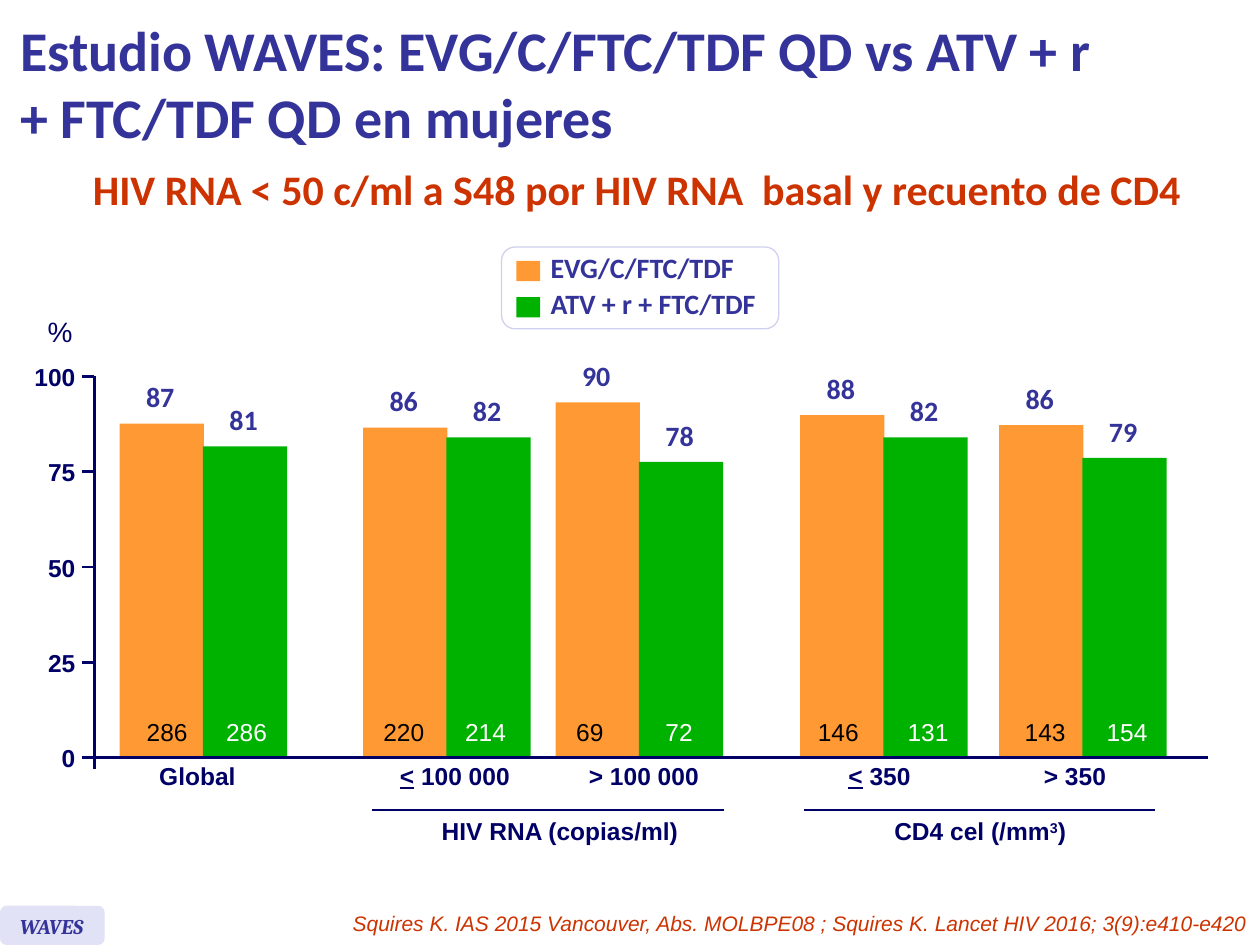
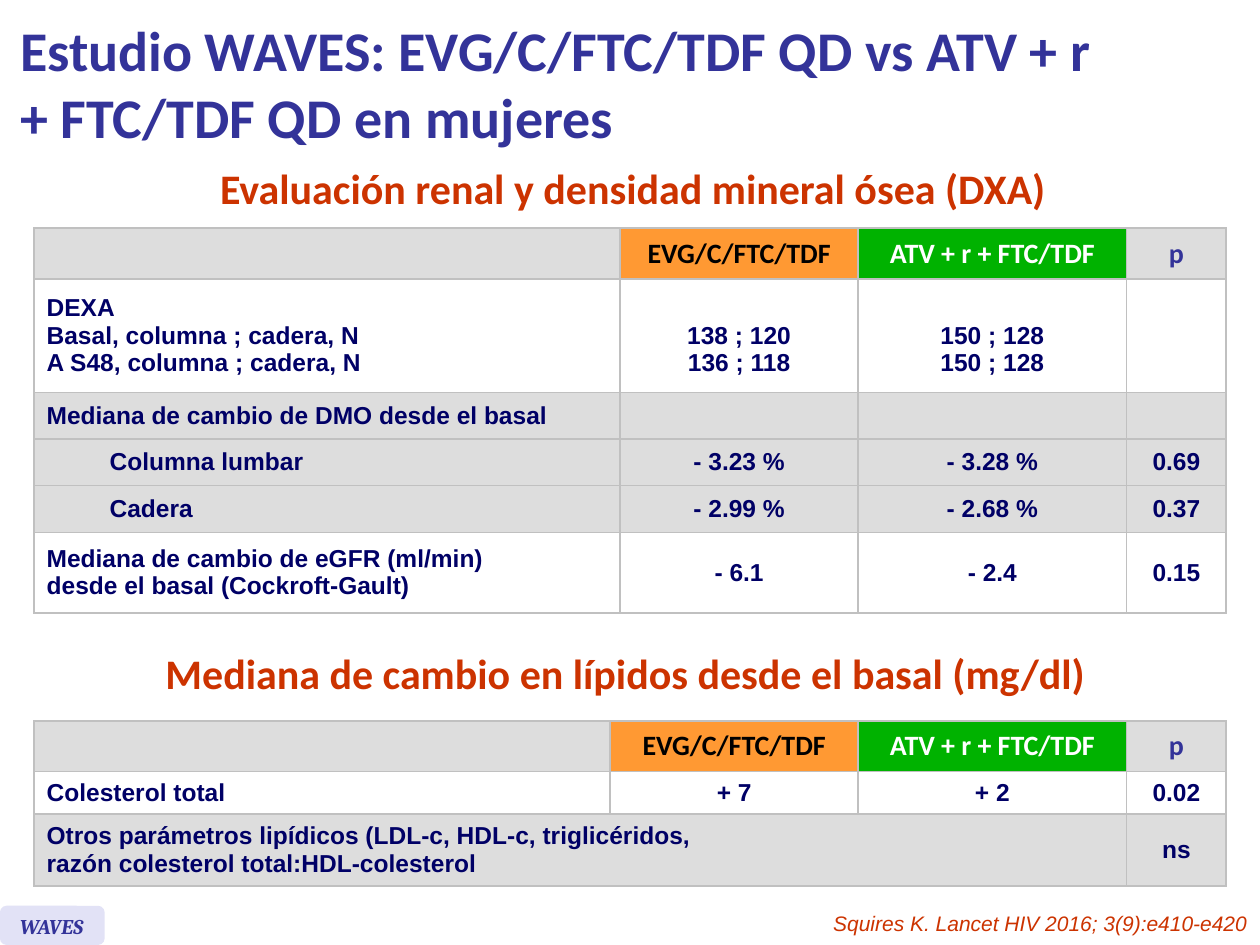
from dataclasses import dataclass, replace
from itertools import product

from lxml.etree import SubElement
from pptx import Presentation
from pptx.dml.color import RGBColor
from pptx.enum.shapes import MSO_CONNECTOR, MSO_SHAPE
from pptx.enum.text import MSO_ANCHOR, MSO_AUTO_SIZE, PP_ALIGN
from pptx.oxml.ns import qn
from pptx.util import Cm, Pt

COLORS = {
    "indigo": "333399", "navy": "000066", "red": "CC3300", "orange": "FF9933",
    "green": "00B200", "lavender": "E2E2F6", "legend_edge": "D0D0F0",
    "grey": "DDDDDD", "border": "C0C0C0", "white": "FFFFFF", "black": "000000",
}
TITLE = "Estudio WAVES: EVG/C/FTC/TDF QD vs ATV + r\n+ FTC/TDF QD en mujeres"
ARMS = ("EVG/C/FTC/TDF", "ATV + r + FTC/TDF")
ARM_COLORS = ("orange", "green")
ARM_TEXT_COLORS = ("black", "white")

LEFT, CENTER, RIGHT = PP_ALIGN.LEFT, PP_ALIGN.CENTER, PP_ALIGN.RIGHT


@dataclass(frozen=True)
class Style:
    size: float
    font: str
    color: str
    bold: bool = False
    italic: bool = False


@dataclass(frozen=True)
class Span:
    text: str
    underline: bool = False
    superscript: bool = False


@dataclass(frozen=True)
class Bar:
    percent: int
    height: float
    patients: int
    patients_center: float


@dataclass(frozen=True)
class BarPair:
    left: float
    bars: tuple[Bar, Bar]
    label: tuple[Span, ...]
    label_center: float
    label_width: float


@dataclass(frozen=True)
class Bracket:
    start: float
    end: float
    label: tuple[Span, ...]
    label_center: float
    label_width: float


@dataclass(frozen=True)
class Row:
    height: float
    fill: str
    texts: tuple[str, ...]
    label_indent: float = 0
    value_drop: float = 0
    label_columns: int = 1


TITLE_STYLE = Style(32, "Calibri", "indigo", bold=True)
HEADING = Style(24, "Calibri", "red", bold=True)
LABEL = Style(16, "Calibri", "indigo", bold=True)
BODY = Style(14, "Arial", "navy", bold=True)
UNIT = Style(16, "Arial", "navy")
CITATION = Style(12, "Arial", "red", italic=True)
TAG = Style(12, "Cambria", "indigo", bold=True, italic=True)

AXIS_X, AXIS_TOP, AXIS_BOTTOM = 1.9, 7.59, 15.27
BAR_BOTTOM, BAR_WIDTH, BAR_STEP = 15.24, 1.7, 1.68
LABEL_LINE = 0.86

BAR_PAIRS = (
    BarPair(2.41, (Bar(87, 6.7, 286, 3.37), Bar(81, 6.24, 286, 4.97)),
            (Span("Global"),), 3.98, 2.06),
    BarPair(7.32, (Bar(86, 6.62, 220, 8.14), Bar(82, 6.42, 214, 9.79)),
            (Span("<", underline=True), Span(" 100 000")), 9.17, 2.74),
    BarPair(11.2, (Bar(90, 7.13, 69, 11.89), Bar(78, 5.93, 72, 13.69)),
            (Span("> 100 000"),), 12.98, 2.74),
    BarPair(16.13, (Bar(88, 6.87, 146, 16.9), Bar(82, 6.42, 131, 18.71)),
            (Span("<", underline=True), Span(" 350")), 17.73, 1.78),
    BarPair(20.14, (Bar(86, 6.67, 143, 21.07), Bar(79, 6.01, 154, 22.72)),
            (Span("> 350"),), 21.67, 1.78),
)
BRACKETS = (
    Bracket(7.49, 14.6, (Span("HIV RNA (copias/ml)"),), 11.29, 5.31),
    Bracket(16.21, 23.29,
            (Span("CD4 cel (/mm"), Span("3", superscript=True), Span(")")), 19.76, 4.01),
)

BONE_ROWS = (
    Row(2.29, "white", ("DEXA\vBasal, columna ; cadera, N\vA S48, columna ; cadera, N",
                        "138 ; 120\v136 ; 118", "150 ; 128\v150 ; 128", ""), value_drop=0.56),
    Row(0.94, "grey", ("Mediana de cambio de DMO desde el basal", "", "", "")),
    Row(0.94, "grey", ("Columna lumbar", "- 3.23 %", "- 3.28 %", "0.69"), label_indent=1.27),
    Row(0.94, "grey", ("Cadera", "- 2.99 %", "- 2.68 %", "0.37"), label_indent=1.27),
    Row(1.63, "white", ("Mediana de cambio de eGFR (ml/min)\ndesde el basal (Cockroft-Gault)",
                        "- 6.1", "- 2.4", "0.15")),
)
LIPID_ROWS = (
    Row(0.86, "white", ("Colesterol total", "+ 7", "+ 2", "0.02")),
    Row(1.44, "grey", ("Otros parámetros lipídicos (LDL-c, HDL-c, triglicéridos,\n"
                       "razón colesterol total:HDL-colesterol", "", "", "ns"), label_columns=3),
)


def rgb(name: str) -> RGBColor:
    return RGBColor.from_string(COLORS[name])


def add_span(paragraph, span: Span, style: Style) -> None:
    for index, line in enumerate(span.text.split("\n")):
        if index:
            paragraph.add_line_break()
        run = paragraph.add_run()
        run.text = line
        font = run.font
        font.size, font.name = Pt(style.size), style.font
        font.bold, font.italic = style.bold, style.italic
        font.color.rgb = rgb(style.color)
        if span.underline:
            font.underline = True
        if span.superscript:
            run._r.get_or_add_rPr().set("baseline", "30000")


def add_text(slide, left: float, top: float, width: float, height: float,
             spans: tuple[Span, ...], style: Style, align=LEFT, wrap: bool = False,
             inset: float | None = None, anchor=MSO_ANCHOR.TOP) -> None:
    box = slide.shapes.add_textbox(Cm(left), Cm(top), Cm(width), Cm(height))
    frame = box.text_frame
    frame.word_wrap = wrap
    frame.auto_size = MSO_AUTO_SIZE.SHAPE_TO_FIT_TEXT
    frame.vertical_anchor = anchor
    if inset is not None:
        frame.margin_left = frame.margin_right = Cm(inset)
        frame.margin_top = frame.margin_bottom = Cm(inset)
    paragraph = frame.paragraphs[0]
    paragraph.alignment = align
    for span in spans:
        add_span(paragraph, span, style)


def add_centered(slide, center: float, top: float, width: float, height: float,
                 spans: tuple[Span, ...], style: Style, inset: float | None = None) -> None:
    """Place a text box by its horizontal centre."""
    add_text(slide, center - width / 2, top, width, height, spans, style, CENTER, inset=inset)


def add_block(slide, left: float, top: float, width: float, height: float, fill: str,
              kind=MSO_SHAPE.RECTANGLE, edge: str | None = None) -> None:
    shape = slide.shapes.add_shape(kind, Cm(left), Cm(top), Cm(width), Cm(height))
    shape.shadow.inherit = False
    shape.fill.solid()
    shape.fill.fore_color.rgb = rgb(fill)
    if edge:
        shape.line.color.rgb = rgb(edge)
        shape.line.width = Pt(0.75)
    else:
        shape.line.fill.background()


def add_line(slide, x1: float, y1: float, x2: float, y2: float) -> None:
    line = slide.shapes.add_connector(MSO_CONNECTOR.STRAIGHT, Cm(x1), Cm(y1), Cm(x2), Cm(y2))
    line.line.color.rgb = rgb("navy")
    line.line.width = Pt(1.5)
    SubElement(line._element.spPr, qn("a:effectLst"))


def add_heading(slide, text: str, center: float, top: float, width: float) -> None:
    add_centered(slide, center, top, width, 1.27, (Span(text),), HEADING)


def add_study_slide(presentation, citation: str, citation_width: float):
    """Add a slide with the study title, the tag and the citation."""
    slide = presentation.slides.add_slide(presentation.slide_layouts[5])
    title = slide.shapes.title
    title.left, title.top, title.width, title.height = Cm(0.15), Cm(0.13), Cm(22.76), Cm(3.07)
    frame = title.text_frame
    frame.auto_size = MSO_AUTO_SIZE.NONE
    frame.vertical_anchor = MSO_ANCHOR.MIDDLE
    frame.paragraphs[0].alignment = LEFT
    add_span(frame.paragraphs[0], Span(TITLE), TITLE_STYLE)
    add_block(slide, 0, 18.26, 2.11, 0.79, "lavender", MSO_SHAPE.ROUNDED_RECTANGLE)
    add_text(slide, 0.15, 18.29, 1.96, 0.76, (Span("WAVES"),), TAG, wrap=True)
    add_text(slide, 25.4 - citation_width, 18.24, citation_width, 0.76,
             (Span(citation),), CITATION, RIGHT, wrap=True)
    return slide


def draw_legend(slide) -> None:
    add_block(slide, 10.11, 4.98, 5.59, 1.65, "white", MSO_SHAPE.ROUNDED_RECTANGLE, "legend_edge")
    for index, (arm, color, width) in enumerate(zip(ARMS, ARM_COLORS, (4.27, 4.8))):
        offset = index * 0.73
        add_block(slide, 10.41, 5.26 + offset, 0.48, 0.41, color)
        add_text(slide, 10.85, 4.92 + offset, width, 0.94, (Span(arm),), LABEL)


def draw_axes(slide) -> None:
    add_text(slide, 0.71, 6.22, 1.02, 0.94, (Span("%"),), UNIT)
    for value in range(0, 101, 25):
        y = AXIS_BOTTOM - (AXIS_BOTTOM - AXIS_TOP) * value / 100
        width = 0.28 * len(str(value))
        add_text(slide, 1.52 - width, y - 0.3, width, 0.61, (Span(str(value)),), BODY, RIGHT,
                 inset=0, anchor=MSO_ANCHOR.MIDDLE)
        add_line(slide, 1.65, y, AXIS_X if value else 24.36, y)
    add_line(slide, AXIS_X, AXIS_TOP - 0.02, AXIS_X, AXIS_BOTTOM + 0.23)


def draw_bar_pair(slide, pair: BarPair) -> None:
    for index, bar in enumerate(pair.bars):
        left, top = pair.left + index * BAR_STEP, BAR_BOTTOM - bar.height
        add_block(slide, left, top, BAR_WIDTH, bar.height, ARM_COLORS[index])
        add_centered(slide, left + BAR_WIDTH / 2 - 0.03, top - 1.13, 1.09, 1.19,
                     (Span(str(bar.percent)),), LABEL, inset=0.25)
        patients = str(bar.patients)
        add_centered(slide, bar.patients_center, 14.33, 0.51 + 0.28 * len(patients), LABEL_LINE,
                     (Span(patients),), Style(14, "Arial", ARM_TEXT_COLORS[index]))
    add_centered(slide, pair.label_center, 15.21, pair.label_width, LABEL_LINE, pair.label, BODY)


def draw_bracket(slide, bracket: Bracket) -> None:
    add_line(slide, bracket.start, 16.33, bracket.end, 16.33)
    add_centered(slide, bracket.label_center, 16.33, bracket.label_width, LABEL_LINE,
                 bracket.label, BODY)


def format_cell(cell, fill: str) -> None:
    properties = cell._tc.get_or_add_tcPr()
    for side in ("lnL", "lnR", "lnT", "lnB"):
        border = SubElement(properties, qn(f"a:{side}"), w=str(Pt(1)))
        solid = SubElement(border, qn("a:solidFill"))
        SubElement(solid, qn("a:srgbClr"), val=COLORS["border"])
    cell.fill.solid()
    cell.fill.fore_color.rgb = rgb(fill)
    cell.vertical_anchor = MSO_ANCHOR.MIDDLE
    cell.margin_left = cell.margin_right = Cm(0.25)
    cell.margin_top = cell.margin_bottom = Cm(0.13)


def fill_cell(cell, text: str, style: Style, align) -> None:
    """Write one paragraph for each part of the text that a vertical tab divides."""
    frame = cell.text_frame
    for index, part in enumerate(text.split("\v")):
        paragraph = frame.add_paragraph() if index else frame.paragraphs[0]
        paragraph.alignment = align
        if part:
            add_span(paragraph, Span(part), style)
        else:
            SubElement(paragraph._p, qn("a:endParaRPr"), sz=str(style.size * 100))


def draw_table(slide, top: float, widths: tuple[float, ...], rows: tuple[Row, ...]) -> None:
    all_rows = (Row(1.02, "grey", ("", *ARMS, "p")), *rows)
    frame = slide.shapes.add_table(len(all_rows), len(widths), Cm(0.69), Cm(top),
                                   Cm(sum(widths)), Cm(sum(row.height for row in all_rows)))
    table = frame.table
    table.first_row = table.horz_banding = False
    for column, width in zip(table.columns, widths):
        column.width = Cm(width)
    for table_row, row in zip(table.rows, all_rows):
        table_row.height = Cm(row.height)
    for (row_index, row), column in product(enumerate(all_rows), range(len(widths))):
        cell = table.cell(row_index, column)
        fill, style = row.fill, BODY
        if row_index == 0:
            style = LABEL
            if column in (1, 2):
                fill = ARM_COLORS[column - 1]
                style = replace(LABEL, color=ARM_TEXT_COLORS[column - 1])
        format_cell(cell, fill)
        if column == 0:
            cell.margin_left = Cm(0.25 + row.label_indent)
        else:
            cell.margin_top = Cm(0.13 + row.value_drop)
        fill_cell(cell, row.texts[column], style, CENTER if column else LEFT)
    for row_index, row in enumerate(all_rows):
        if row.label_columns > 1:
            table.cell(row_index, 0).merge(table.cell(row_index, row.label_columns - 1))


def build_response_slide(presentation) -> None:
    slide = add_study_slide(presentation, "Squires K. IAS 2015 Vancouver, Abs. MOLBPE08 ; "
                            "Squires K. Lancet HIV 2016; 3(9):e410-e420", 19.6)
    add_heading(slide, "HIV RNA < 50 c/ml a S48 por HIV RNA  basal y recuento de CD4",
                12.84, 3.18, 22.78)
    draw_legend(slide)
    for pair in BAR_PAIRS:
        draw_bar_pair(slide, pair)
    draw_axes(slide)
    for bracket in BRACKETS:
        draw_bracket(slide, bracket)


def build_safety_slide(presentation) -> None:
    slide = add_study_slide(presentation, "Squires K. Lancet HIV 2016; 3(9):e410-e420", 10.2)
    add_heading(slide, "Evaluación renal y densidad mineral ósea (DXA)", 12.76, 3.15, 17.65)
    draw_table(slide, 4.6, (11.81, 4.8, 5.41, 2.01), BONE_ROWS)
    add_heading(slide, "Mediana de cambio en lípidos desde el basal (mg/dl)", 12.61, 12.93, 19.38)
    draw_table(slide, 14.53, (11.61, 5, 5.41, 2.01), LIPID_ROWS)


def main() -> None:
    presentation = Presentation()
    presentation.slide_width, presentation.slide_height = Cm(25.4), Cm(19.05)
    build_response_slide(presentation)
    build_safety_slide(presentation)
    presentation.save("out.pptx")


if __name__ == "__main__":
    main()
